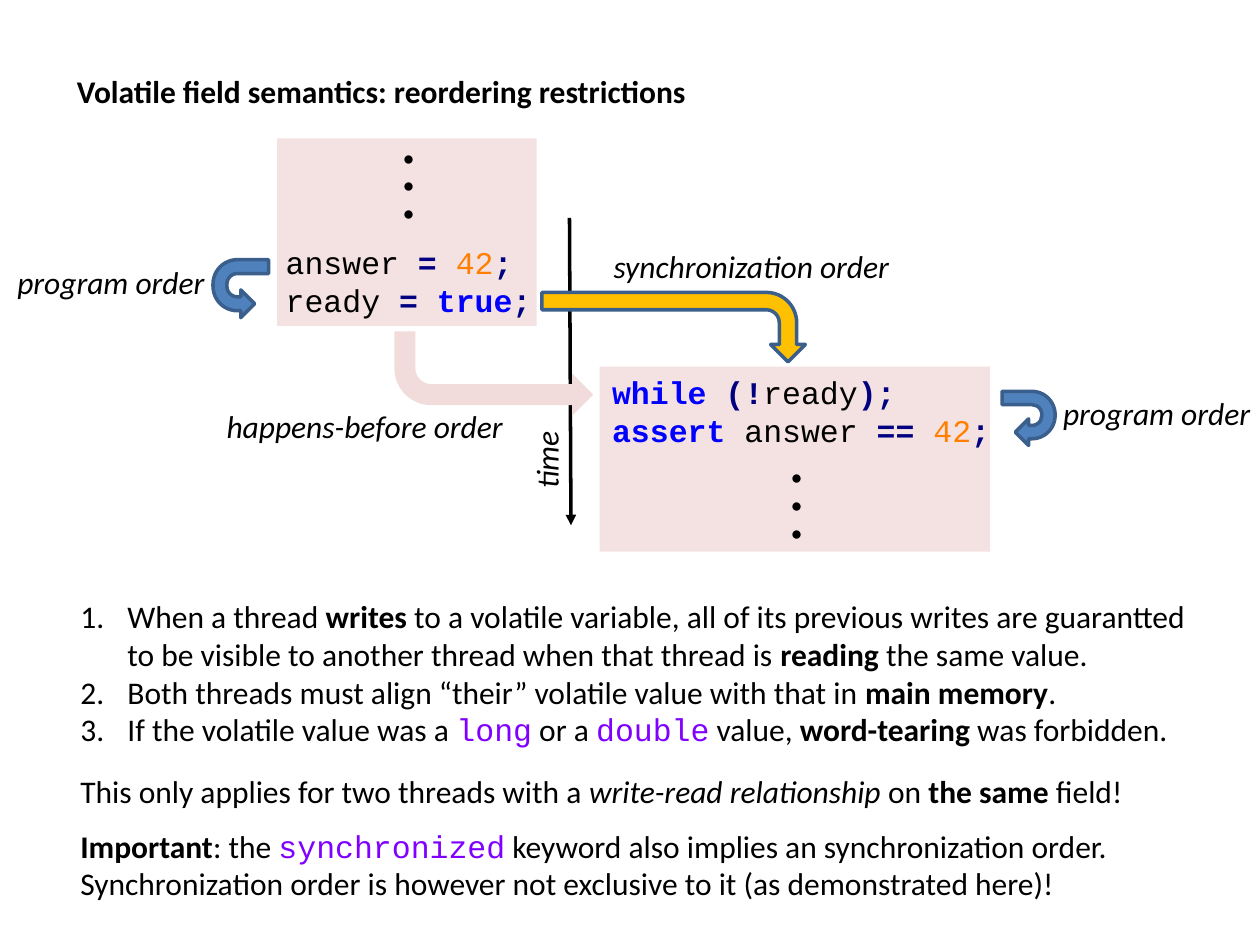
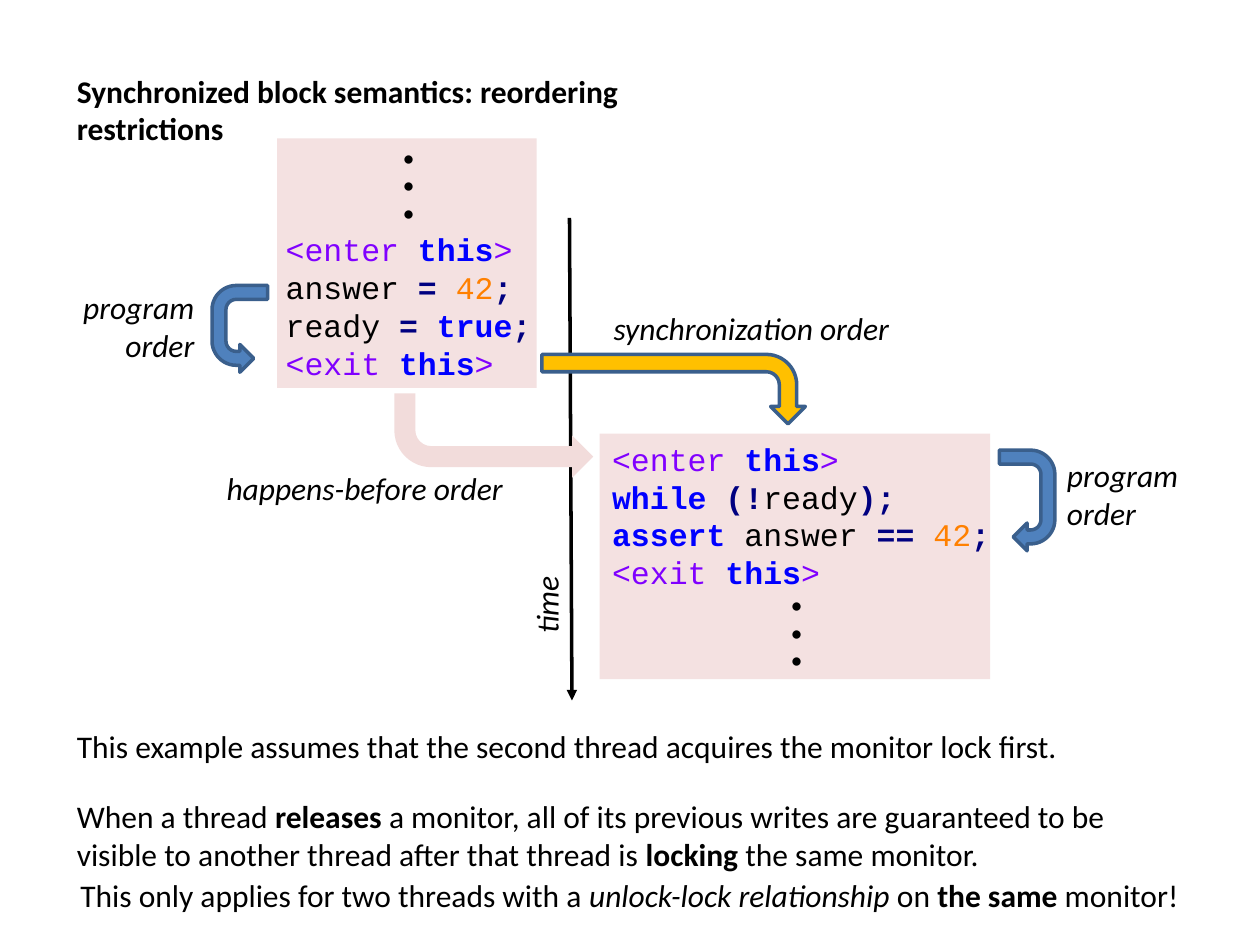
from dataclasses import dataclass
from typing import NamedTuple

from lxml.etree import SubElement
from pptx import Presentation
from pptx.dml.color import RGBColor
from pptx.enum.shapes import MSO_CONNECTOR, MSO_SHAPE
from pptx.enum.text import MSO_AUTO_SIZE, PP_ALIGN
from pptx.oxml.ns import qn
from pptx.util import Cm, Pt

# Colours
BLACK = RGBColor(0x00, 0x00, 0x00)
BLUE = RGBColor(0x00, 0x00, 0xFF)
NAVY = RGBColor(0x00, 0x00, 0x80)
ORANGE = RGBColor(0xFF, 0x80, 0x00)
PURPLE = RGBColor(0x80, 0x00, 0xFF)
ROSE = RGBColor(0xE6, 0xB9, 0xB8)
PINK = RGBColor(0xF2, 0xDC, 0xDB)
GOLD = RGBColor(0xFF, 0xC0, 0x00)
STEEL = RGBColor(0x4F, 0x81, 0xBD)
EDGE = RGBColor(0x3A, 0x5F, 0x8C)

# Text styles: font attributes and colour
BODY = {"name": "Calibri", "size": Pt(18), "bold": False, "italic": False}
CODE = BODY | {"name": "Courier New"}
PLAIN = (BODY, BLACK)
BOLD = (BODY | {"bold": True}, BLACK)
ITALIC = (BODY | {"italic": True}, BLACK)
DOTS = (BODY | {"bold": True, "size": Pt(32)}, BLACK)
NAME = (CODE, BLACK)
NUMBER = (CODE, ORANGE)
TAG = (CODE, PURPLE)
WORD = (CODE | {"bold": True}, BLUE)
SIGN = (CODE | {"bold": True}, NAVY)

# Shared layout, in centimetres
LINE_H, PAIR_H, QUAD_H = 1.02, 1.8, 3.33
LEFT_X, LEFT_Y, LEFT_W = 5.59, 2.79, 5.23
RIGHT_X, RIGHT_W = 12.09, 7.87
TIME_X, TIME_Y = 11.48, 4.39


class Box(NamedTuple):
    x: float
    y: float
    w: float
    h: float

    def cm(self) -> tuple:
        return tuple(Cm(side) for side in self)


class Run(NamedTuple):
    text: str
    style: tuple = PLAIN


@dataclass
class Note:
    box: Box
    lines: list
    align: PP_ALIGN = PP_ALIGN.LEFT
    turn: int = 0
    wrap: bool = False
    listed: bool = False


@dataclass
class Arrow:
    kind: MSO_SHAPE
    box: Box
    fill: RGBColor
    turn: int = 90
    flip: str = ""
    edge: bool = True


@dataclass
class Plan:
    title: str
    left_h: float
    right_y: float
    right_h: float
    setter: Note
    getter: Note
    time_end: tuple
    time_y: float
    turns: list
    notes: list


def add_note(slide, note: Note) -> None:
    shape = slide.shapes.add_textbox(*note.box.cm())
    shape.rotation = note.turn
    frame = shape.text_frame
    frame.word_wrap = note.wrap
    frame.auto_size = MSO_AUTO_SIZE.SHAPE_TO_FIT_TEXT
    for i, runs in enumerate(note.lines):
        para = frame.add_paragraph() if i else frame.paragraphs[0]
        para.alignment = note.align
        if note.listed:
            props = para._p.get_or_add_pPr()
            props.set("marL", str(Cm(0.95)))
            props.set("indent", str(-Cm(0.95)))
            SubElement(props, qn("a:buAutoNum"), type="arabicPeriod")
        for text, style in runs:
            for j, part in enumerate(text.split("\n")):
                if j:
                    para.add_line_break()
                run = para.add_run()
                run.text = part
                font, color = style
                for key, value in font.items():
                    setattr(run.font, key, value)
                run.font.color.rgb = color


def add_panel(slide, box: Box) -> None:
    shape = slide.shapes.add_shape(MSO_SHAPE.RECTANGLE, *box.cm())
    shape.shadow.inherit = False
    shape.fill.solid()
    shape.fill.fore_color.rgb = ROSE
    shape.line.fill.background()
    color = shape._element.spPr.find(".//" + qn("a:srgbClr"))
    SubElement(color, qn("a:alpha"), val="42000")


def add_arrow(slide, arrow: Arrow) -> None:
    shape = slide.shapes.add_shape(arrow.kind, *arrow.box.cm())
    shape.shadow.inherit = False
    shape.rotation = arrow.turn
    if arrow.flip:
        shape._element.spPr.get_or_add_xfrm().set(arrow.flip, "1")
    shape.fill.solid()
    shape.fill.fore_color.rgb = arrow.fill
    if arrow.edge:
        shape.line.color.rgb = EDGE
        shape.line.width = Pt(2)
    else:
        shape.line.fill.background()


def add_time(slide, end: tuple) -> None:
    line = slide.shapes.add_connector(
        MSO_CONNECTOR.STRAIGHT, Cm(TIME_X), Cm(TIME_Y), *map(Cm, end))
    line.line.color.rgb = BLACK
    line.line.width = Pt(2)
    SubElement(line.line._get_or_add_ln(), qn("a:tailEnd"), type="triangle")
    SubElement(line._element.spPr, qn("a:effectLst"))


def label(text: str, box: Box, style: tuple = ITALIC, **more) -> Note:
    return Note(box, [[Run(line, style)] for line in text.split("\n")], **more)


def draw(slide, plan: Plan) -> None:
    left_end = LEFT_Y + plan.left_h
    right_end = plan.right_y + plan.right_h

    # Code panels
    add_panel(slide, Box(RIGHT_X, plan.right_y, RIGHT_W, plan.right_h))
    add_panel(slide, Box(LEFT_X, LEFT_Y, LEFT_W, plan.left_h))
    add_note(slide, label(plan.title, Box(1.3, 1.32, 14, LINE_H), BOLD))
    add_note(slide, plan.getter)
    add_note(slide, plan.setter)

    # Time axis and order arrows
    add_time(slide, plan.time_end)
    bent, uturn = MSO_SHAPE.BENT_ARROW, MSO_SHAPE.U_TURN_ARROW
    add_arrow(slide, Arrow(bent, Box(12.88, left_end - 2.63, 1.4, 5.31), GOLD))
    for box, flip in zip(plan.turns, ("", "flipV")):
        add_arrow(slide, Arrow(uturn, box, STEEL, flip=flip))
    add_arrow(slide, Arrow(bent, Box(7.95, left_end + 0.11, 4.01, 1.7), PINK,
                           turn=180, flip="flipH", edge=False))

    # Labels
    add_note(slide, label("time", Box(10.16, plan.time_y, 1.7, LINE_H), turn=270))
    for x, y in ((6.91, 2.95), (14.73, right_end - 1.72)):
        add_note(slide, label(". . .", Box(x, y, 1.93, 1.63), DOTS, turn=270))
    add_note(slide, label("synchronization order",
                          Box(12.12, left_end - 1.72, 6.2, LINE_H)))
    add_note(slide, label("happens-before order",
                          Box(4.24, left_end + 1.52, 6.15, LINE_H),
                          align=PP_ALIGN.RIGHT, wrap=True))
    for note in plan.notes:
        add_note(slide, note)


def only(bond: str, same: str, end: str, box: Box) -> Note:
    return Note(box, [[Run("This only applies for two threads with a "),
                       Run(bond, ITALIC), Run("on "), Run(same, BOLD), Run(end)]],
                wrap=True)


# Code shared by both slides
SETTER = [
    [Run("answer ", NAME), Run("= ", SIGN), Run("42", NUMBER), Run(";", SIGN)],
    [Run("ready ", NAME), Run("= ", SIGN), Run("true", WORD), Run(";", SIGN)],
]
GETTER = [
    [Run("while ", WORD), Run("(!", SIGN), Run("ready", NAME), Run(");", SIGN)],
    [Run("assert ", WORD), Run("answer ", NAME), Run("== ", SIGN),
     Run("42", NUMBER), Run(";", SIGN)],
]


def guard(lines: list) -> list:
    enter, leave = ([Run(f"<{verb} ", TAG), Run("this", WORD), Run(">", TAG)]
                    for verb in ("enter", "exit"))
    return [enter, *lines, leave]


VOLATILE = Plan(
    title="Volatile field semantics: reordering restrictions",
    left_h=3.78, right_y=7.39, right_h=3.73,
    setter=Note(Box(5.51, 4.78, 5.89, PAIR_H), SETTER, wrap=True),
    getter=Note(Box(RIGHT_X, 7.39, 8.2, PAIR_H), GETTER, wrap=True),
    time_end=(11.51, 10.59), time_y=8.74,
    turns=[Box(20.19, 7.9, 1.09, 1.07), Box(4.27, 5.26, 1.17, 1.12)],
    notes=[
        label("program order", Box(21.18, 7.82, 4.32, LINE_H)),
        label("program order", Box(0.1, 5.18, 4.32, LINE_H)),
        Note(Box(1.37, 11.91, 23.88, QUAD_H), [
            [Run("When a thread "), Run("writes", BOLD),
             Run(" to a volatile variable, all of its previous writes are guarantted"
                 "\nto be visible to another thread when that thread is "),
             Run("reading ", BOLD), Run("the same value.")],
            [Run("Both threads must align “their” volatile value with that in "),
             Run("main memory", BOLD), Run(".")],
            [Run("If the volatile value was a "), Run("long", TAG), Run(" or a "),
             Run("double", TAG), Run(" value, "), Run("word-tearing", BOLD),
             Run(" was forbidden.")],
        ], listed=True),
        only("write-read relationship ", "the same ", "field!",
             Box(1.37, 15.44, 22.15, LINE_H)),
        Note(Box(1.37, 16.54, 21.56, PAIR_H), [
            [Run("Important", BOLD), Run(": the "), Run("synchronized", TAG),
             Run(" keyword also implies an synchronization order.")],
            [Run("Synchronization order is however not exclusive to it "
                 "(as demonstrated here)!")],
        ]),
    ],
)

MONITOR = Plan(
    title="Synchronized block semantics: reordering restrictions",
    left_h=5.03, right_y=8.74, right_h=4.95,
    setter=Note(Box(5.51, 4.52, 5.89, QUAD_H), guard(SETTER), wrap=True),
    getter=Note(Box(RIGHT_X, 8.74, 8.2, QUAD_H), guard(GETTER), wrap=True),
    time_end=(11.53, 14.12), time_y=11.66,
    turns=[Box(19.69, 9.53, 2.03, 1.12), Box(3.96, 6.07, 1.75, 1.12)],
    notes=[
        label("program\norder", Box(21.26, 9.07, 2.92, PAIR_H)),
        label("program\norder", Box(1.4, 5.69, 2.77, PAIR_H), align=PP_ALIGN.RIGHT),
        label("This example assumes that the second thread acquires the "
              "monitor lock first.", Box(1.3, 14.53, 20.5, LINE_H), PLAIN),
        Note(Box(1.3, 15.95, 21.62, PAIR_H), [
            [Run("When a thread "), Run("releases ", BOLD),
             Run("a monitor, all of its previous writes are guaranteed to be")],
            [Run("visible to another thread after that thread is "),
             Run("locking ", BOLD), Run("the same monitor.")],
        ]),
        only("unlock-lock relationship ", "the same", " monitor!",
             Box(1.37, 17.53, 22.94, LINE_H)),
    ],
)


def main() -> None:
    deck = Presentation()
    deck.slide_width, deck.slide_height = Cm(25.4), Cm(19.05)
    for plan in (VOLATILE, MONITOR):
        draw(deck.slides.add_slide(deck.slide_layouts[6]), plan)
    deck.save("out.pptx")


if __name__ == "__main__":
    main()
